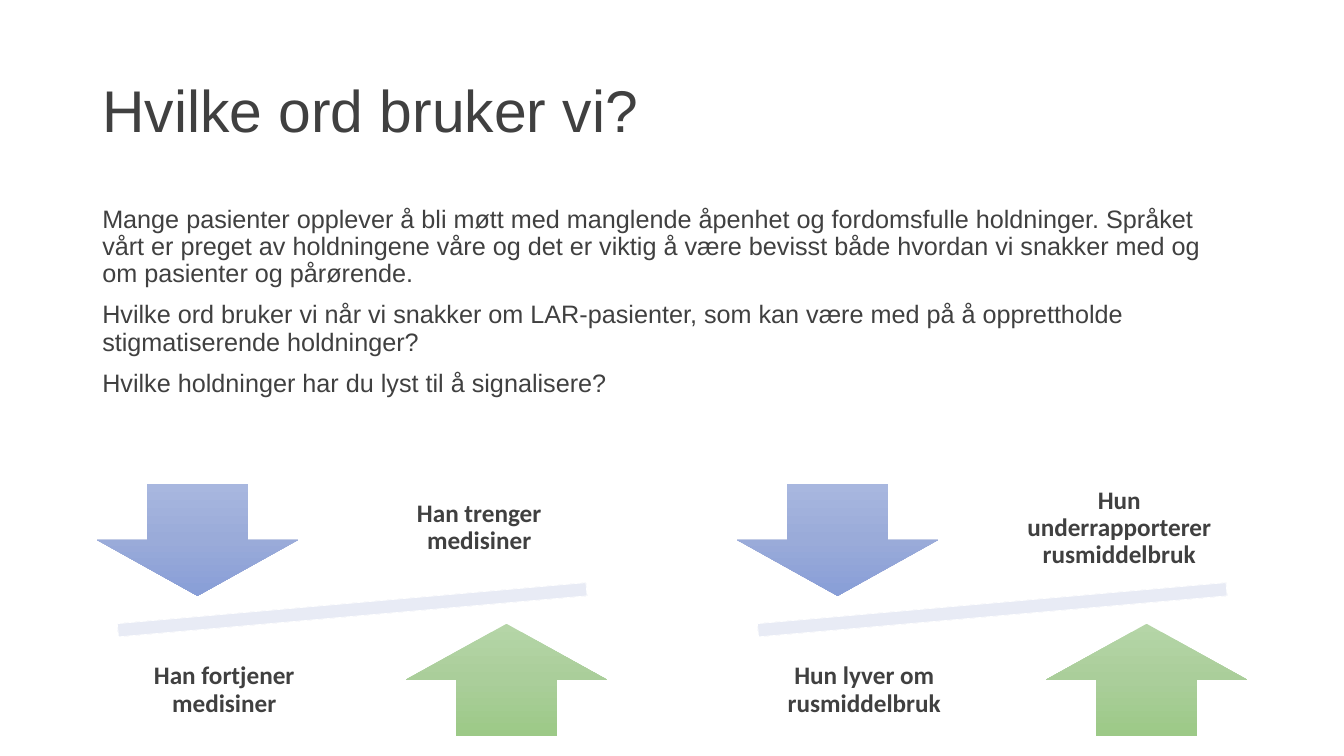
from copy import deepcopy

from pptx import Presentation
from pptx.dml.color import RGBColor
from pptx.enum.shapes import MSO_SHAPE as Shape
from pptx.enum.text import MSO_ANCHOR as Anchor, PP_ALIGN as Align
from pptx.util import Pt

INK = "404040"
BLUE = ("A8B7DF", "9AABD9", "889ED7")
GREEN = ("B5D5A7", "AACE9A", "9CC987")
PALE = ("F3F5FA", "E8EBF5", "E4E8F4")

TITLE = "Hvilke ord bruker vi?"
QUESTIONS = [
    "Mange pasienter opplever å bli møtt med manglende åpenhet og "
    "fordomsfulle holdninger. Språket vårt er preget av holdningene våre og "
    "det er viktig å være bevisst både hvordan vi snakker med og om "
    "pasienter og pårørende.",
    "Hvilke ord bruker vi når vi snakker om LAR-pasienter, som kan være med "
    "på å opprettholde stigmatiserende holdninger?",
    "Hvilke holdninger har du lyst til å signalisere?",
]
# Upper and lower wording of each seesaw
SEESAWS = [
    ("Han trenger medisiner", "Han fortjener medisiner"),
    ("Hun underrapporterer rusmiddelbruk", "Hun lyver om rusmiddelbruk"),
]
SEESAW_LEFT, SEESAW_STEP = 23, 457.2

TITLE_FORMAT = {"name": "Arial", "size": Pt(42)}
BODY_FORMAT = {"name": "Arial", "size": Pt(18)}
LABEL_FORMAT = {"name": "Calibri", "size": Pt(18), "bold": True}


def rgb(value):
    return RGBColor.from_string(value)


def set_attributes(target, values):
    for name, value in values.items():
        setattr(target, name, value)


def add_text(shapes, box, texts, font_format, frame_format, para_format, gap=0):
    frame = shapes.add_textbox(*map(Pt, box)).text_frame
    set_attributes(frame, {"word_wrap": True, **frame_format})
    for index, text in enumerate(texts):
        paragraph = frame.add_paragraph() if index else frame.paragraphs[0]
        paragraph.text = text
        set_attributes(paragraph, {"line_spacing": 0.9, **para_format})
        if index:
            paragraph.space_before = Pt(gap)
        set_attributes(paragraph.font, font_format)
        paragraph.font.color.rgb = rgb(INK)


def add_gradient_shape(shapes, kind, box, colours):
    shape = shapes.add_shape(kind, *map(Pt, box))
    shape.shadow.inherit = False
    shape.line.fill.background()
    shape.fill.gradient()
    shape.fill.gradient_angle = 270
    # The default gradient has two stops; add a third
    stop_list = shape._element.spPr.xpath("./a:gradFill/a:gsLst")[0]
    stop_list.append(deepcopy(stop_list[-1]))
    for stop, position, colour in zip(shape.fill.gradient_stops, (0, 0.5, 1), colours):
        stop.position = position
        stop.color.rgb = rgb(colour)
    return shape


def add_label(shapes, left, top, text):
    inset = Pt(10)
    margins = {f"margin_{side}": inset for side in ("left", "top", "right", "bottom")}
    add_text(shapes, (left, top, 153.4, 83.5), [text], LABEL_FORMAT,
             {"vertical_anchor": Anchor.MIDDLE, **margins},
             {"alignment": Align.CENTER, "space_after": Pt(6.3)})


def add_seesaw(slide, left, upper, lower):
    shapes = slide.shapes.add_group_shape().shapes
    # Tilted beam
    beam = add_gradient_shape(shapes, Shape.MATH_MINUS, (left, 415.4, 457.2, 40.3), PALE)
    beam.rotation = 355
    beam.line.color.rgb = rgb("FFFFFF")
    beam.line.width = Pt(0.5)
    # Arrows and their wording
    add_gradient_shape(shapes, Shape.DOWN_ARROW, (left + 46.1, 345.6, 144, 80), BLUE)
    add_label(shapes, left + 242.6, 335.5, upper)
    add_gradient_shape(shapes, Shape.UP_ARROW, (left + 266.8, 445.6, 144, 80), GREEN)
    add_label(shapes, left + 60.5, 451.4, lower)


def main():
    deck = Presentation()
    deck.slide_width, deck.slide_height = Pt(960), Pt(540)
    slide = deck.slides.add_slide(deck.slide_layouts[6])

    # Seesaws
    for index, (upper, lower) in enumerate(SEESAWS):
        add_seesaw(slide, SEESAW_LEFT + index * SEESAW_STEP, upper, lower)

    # Title and questions
    add_text(slide.shapes, (66, 28.8, 828, 104.4), [TITLE], TITLE_FORMAT,
             {"vertical_anchor": Anchor.MIDDLE}, {})
    add_text(slide.shapes, (66, 144, 828, 161.3), QUESTIONS, BODY_FORMAT, {}, {}, gap=10)

    deck.save("out.pptx")


if __name__ == "__main__":
    main()
